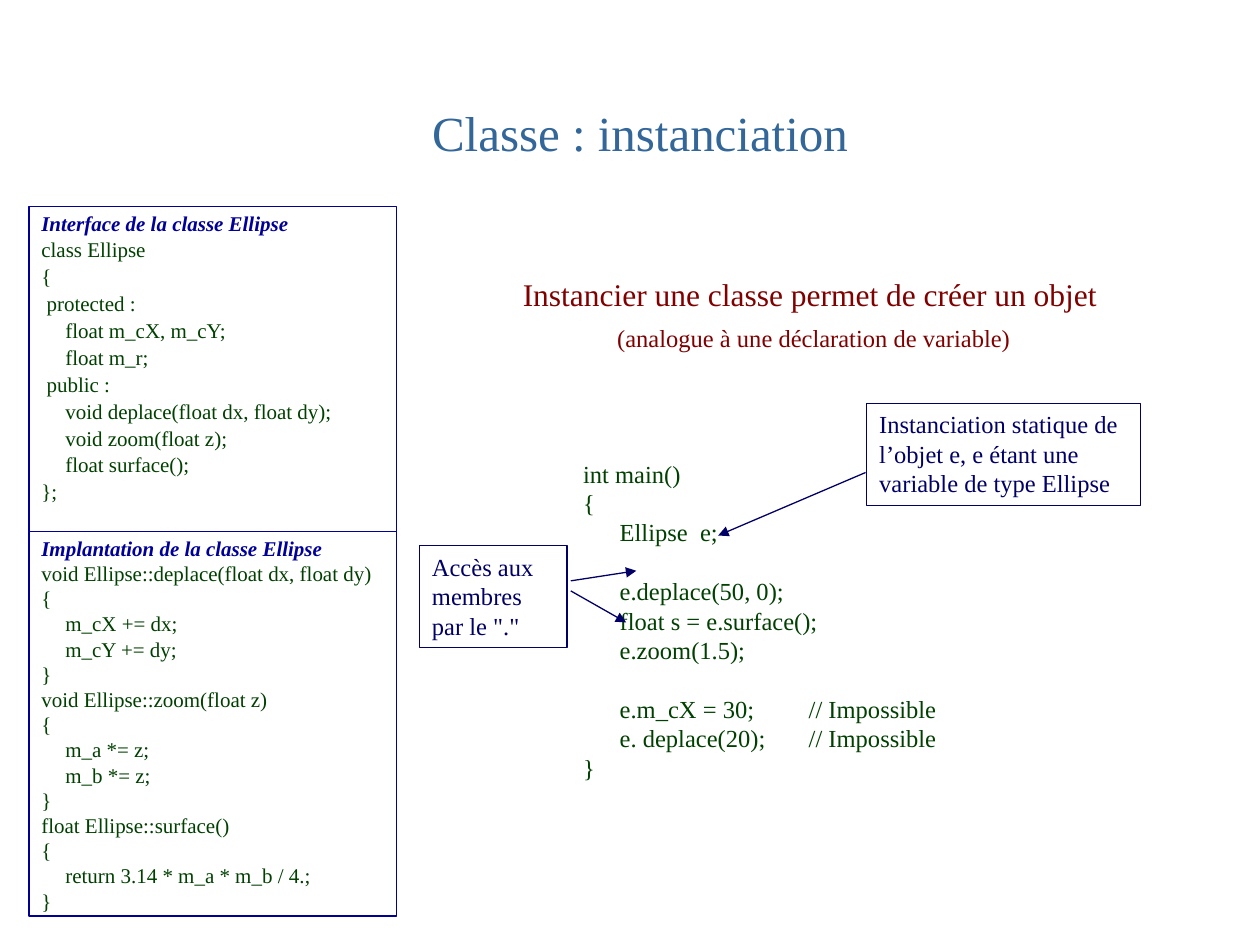
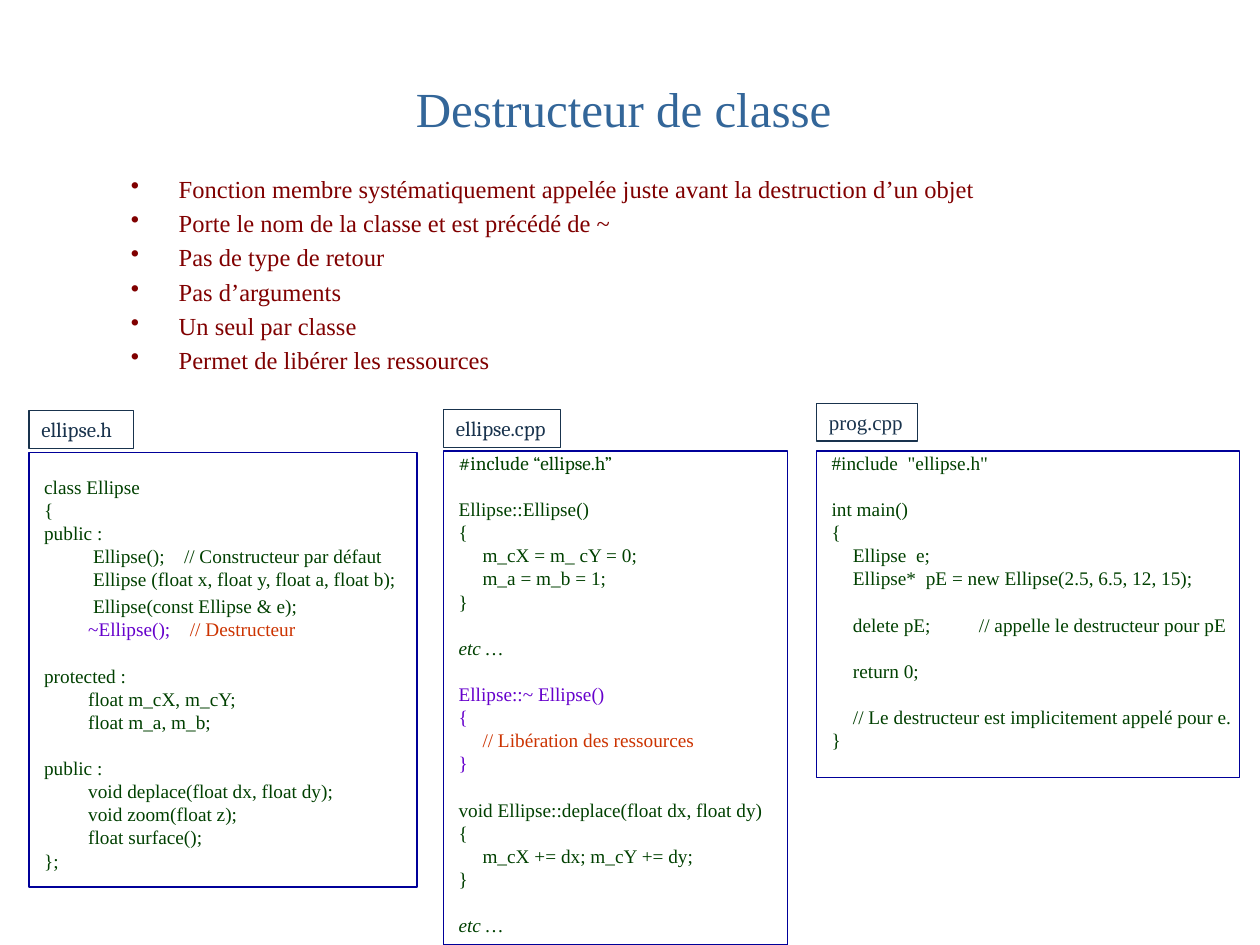
from dataclasses import dataclass
from typing import Optional, Union

from lxml.etree import SubElement
from pptx import Presentation
from pptx.dml.color import RGBColor as Rgb
from pptx.enum.shapes import MSO_CONNECTOR as Link, MSO_SHAPE as Form
from pptx.enum.text import MSO_ANCHOR as Anchor, PP_ALIGN as Align
from pptx.oxml.ns import qn
from pptx.slide import Slide
from pptx.util import Inches, Pt


@dataclass(frozen=True)
class Theme:
    title: str = "336699"
    code: str = "004000"
    frame: str = "000099"
    call: str = "000066"
    label: str = "19334D"
    point: str = "800000"
    kill: str = "6600CC"
    note: str = "CC3300"
    serif: str = "Times New Roman"
    alt: str = "Cambria"
    head_size: int = 28
    lead_size: int = 18
    text_size: int = 14
    code_size: int = 12
    file_size: int = 11
    edge: float = 0.75
    pitch: float = 1.2  # line height, in type sizes


@dataclass(frozen=True)
class Line:
    """One paragraph; fields left as None follow the text around it."""
    text: str
    color: Optional[str] = None
    face: Optional[str] = None
    size: Optional[int] = None
    bold: bool = False
    slant: bool = False
    lead: Optional[float] = None
    space: Optional[float] = None
    tail: Optional["Line"] = None


Lines = list[Union[str, Line]]
Quad = tuple[float, float, float, float]


@dataclass(frozen=True)
class Panel:
    at: Quad
    lines: Lines
    size: int
    hang: tuple[float, float]
    pad: Quad = (0, 0, 0, 0)
    lead: float = 0
    space: float = 1


@dataclass(frozen=True)
class Label:
    at: Quad
    text: str
    face: str


T = Theme()
PAD = (0.1, 0.05, 0.1, 0.05)
EM = chr(8195)


def put(slide: Slide, at: Quad, lines: Lines, *, size: int, color: str,
        face: str = T.serif, edge: Optional[str] = None, pad: Quad = PAD,
        hang: tuple[float, float] = (0, 0), lead: float = 0, space: float = 1,
        align: Align = Align.LEFT, anchor: Anchor = Anchor.TOP,
        dots: bool = False) -> None:
    """Draw text, framed if edge is set; an empty line opens a one-line gap."""
    spot = [Inches(n) for n in at]
    if edge:
        box = slide.shapes.add_shape(Form.RECTANGLE, *spot)
        box.shadow.inherit = False
        box.fill.background()
        box.line.color.rgb = Rgb.from_string(edge)
        box.line.width = Pt(T.edge)
    else:
        box = slide.shapes.add_textbox(*spot)
    frame = box.text_frame
    frame.word_wrap = True
    frame.vertical_anchor = anchor
    (frame.margin_left, frame.margin_top,
     frame.margin_right, frame.margin_bottom) = (Inches(n) for n in pad)

    gap, para = 0.0, None
    for item in lines:
        if item == "":
            gap += size * T.pitch
            continue
        line = Line(item) if isinstance(item, str) else item
        para = frame.add_paragraph() if para else frame.paragraphs[0]
        para.alignment = align
        para.line_spacing = line.space or space
        above = lead if line.lead is None else line.lead
        para.space_before = Pt(gap + above * (line.size or size))
        gap = 0.0
        props = para._p.get_or_add_pPr()
        props.set("marL", str(Inches(hang[0])))
        props.set("indent", str(Inches(hang[1])))
        if dots:
            SubElement(props, qn("a:buChar")).set("char", "•")
        part = line
        while part:
            run = para.add_run()
            run.text = part.text
            font = run.font
            font.name = part.face or face
            font.size = Pt(part.size or size)
            font.bold, font.italic = part.bold, part.slant
            font.color.rgb = Rgb.from_string(part.color or color)
            part = part.tail


def title(slide: Slide, left: float, top: float, text: str) -> None:
    put(slide, (left, top, 8.5, 1.25), [text], size=T.head_size,
        color=T.title, align=Align.CENTER, anchor=Anchor.MIDDLE)


def panel(slide: Slide, item: Panel) -> None:
    put(slide, item.at, item.lines, size=item.size, color=T.code,
        edge=T.frame, pad=item.pad, hang=item.hang, lead=item.lead,
        space=item.space)


def arrow(slide: Slide, x1: float, y1: float, x2: float, y2: float) -> None:
    wire = slide.shapes.add_connector(
        Link.STRAIGHT, *(Inches(n) for n in (x1, y1, x2, y2)))
    wire.line.color.rgb = Rgb.from_string(T.call)
    wire.line.width = Pt(T.edge)
    SubElement(wire.line._get_or_add_ln(), qn("a:tailEnd")).set("type", "triangle")
    SubElement(wire._element.spPr, qn("a:effectLst"))


def head(text: str) -> Line:
    return Line(text, T.frame, bold=True, slant=True, space=0.9)


ETC = Line("etc …", slant=True)

CLASS = [
    Panel((0.23, 1.64, 2.92, 2.58), [
        head("Interface de la classe Ellipse"),
        "class Ellipse",
        "{",
        " protected :",
        "\tfloat m_cX, m_cY;",
        "\tfloat m_r;",
        " public :",
        "\tvoid deplace(float dx, float dy);",
        "\tvoid zoom(float z);",
        "\tfloat surface();",
        "};",
    ], T.code_size, (0.19, -0.19), PAD, lead=0.2, space=0.9),
    Panel((0.23, 4.22, 2.92, 3.05), [
        head("Implantation de la classe Ellipse"),
        "void Ellipse::deplace(float dx, float dy)",
        "{",
        "\tm_cX += dx;",
        "\tm_cY += dy;",
        "}",
        "void Ellipse::zoom(float z)",
        "{",
        "\tm_a *= z;",
        "\tm_b *= z;",
        "}",
        "float Ellipse::surface()",
        "{",
        "\treturn 3.14 * m_a * m_b / 4.;",
        "}",
    ], T.code_size, (0.19, -0.19), PAD),
]

MAIN = [
    "int main()",
    "{",
    "\tEllipse  e;",
    "",
    "\te.deplace(50, 0);",
    "\tfloat s = e.surface();",
    "\te.zoom(1.5);",
    "",
    "\te.m_cX = 30; \t// Impossible",
    "\te. deplace(20); \t// Impossible",
    "}",
]

CALLS = [
    ((3.33, 4.33, 1.17, 0.81), 'Accès aux membres par le "."'),
    ((6.88, 3.2, 2.17, 0.81),
     "Instanciation statique de l’objet e, e étant une variable de type Ellipse"),
]

ARROWS = [
    (6.87, 3.75, 5.7, 4.25),
    (4.53, 4.61, 5.05, 4.53),
    (4.53, 4.69, 4.97, 4.94),
]

POINTS = [
    "Fonction membre systématiquement appelée juste avant la destruction d’un objet",
    "Porte le nom de la classe et est précédé de ~",
    "Pas de type de retour",
    "Pas d’arguments",
    "Un seul par classe",
    "Permet de libérer les ressources",
]

FILES = [
    Panel((3.52, 3.58, 2.73, 3.92), [
        Line("#include “ellipse.h”", face=T.alt),
        "",
        "Ellipse::Ellipse()",
        "{",
        "\tm_cX = m_ cY = 0;",
        "\tm_a = m_b = 1;",
        "}",
        "",
        ETC,
        "",
        Line("Ellipse::~ Ellipse()", T.kill),
        Line("{", T.kill),
        Line("\t// Libération des ressources", T.note),
        Line("}", T.kill),
        "",
        "void Ellipse::deplace(float dx, float dy)",
        "{",
        "\tm_cX += dx; m_cY += dy;",
        "}",
        "",
        ETC,
    ], T.file_size, (0.31, -0.19)),
    Panel((6.48, 3.58, 3.36, 2.59), [
        '#include  "ellipse.h"',
        "",
        "int main()",
        "{",
        "\tEllipse  e;",
        "\tEllipse*  pE = new Ellipse(2.5, 6.5, 12, 15);",
        "",
        "\tdelete pE;\t// appelle le destructeur pour pE",
        "",
        "\treturn 0;",
        "",
        "\t// Le destructeur est implicitement appelé pour e.",
        "}",
    ], T.file_size, (0.29, -0.17)),
    Panel((0.23, 3.59, 3.08, 3.45), [
        "class Ellipse",
        "{",
        "public :",
        f"\t Ellipse();{EM}// Constructeur par défaut",
        "\t Ellipse (float x, float y, float a, float b);",
        Line("\t Ellipse(const Ellipse & e);", lead=0.2),
        Line(f"\t~Ellipse();{EM}", T.kill, tail=Line("// Destructeur", T.note)),
        "",
        "protected :",
        "\tfloat m_cX, m_cY;",
        "\tfloat m_a, m_b;",
        "",
        "public :",
        "\tvoid deplace(float dx, float dy);",
        "\tvoid zoom(float z);",
        "\tfloat surface();",
        "};",
    ], T.file_size, (0.47, -0.35), (0, 0.18, 0, 0)),
]

LABELS = [
    Label((0.23, 3.26, 0.83, 0.3), "ellipse.h", T.alt),
    Label((3.52, 3.25, 0.93, 0.3), "ellipse.cpp", T.alt),
    Label((6.48, 3.2, 0.8, 0.3), "prog.cpp", T.serif),
]


def make(slide: Slide) -> None:
    """Slide on creating objects."""
    title(slide, 0.83, 0.42, "Classe : instanciation")
    for item in CLASS:
        panel(slide, item)
    put(slide, (4.53, 3.59, 4.11, 2.69), MAIN, size=T.text_size,
        color=T.code, hang=(0.29, -0.29))
    put(slide, (3.25, 2.17, 6.42, 0.7), [
        Line("Instancier une classe permet de créer un objet ", size=T.lead_size),
        "(analogue à une déclaration de variable)",
    ], size=T.text_size, color=T.point, lead=0.5, space=0.9, align=Align.CENTER)
    for at, text in CALLS:
        put(slide, at, [text], size=T.text_size, color=T.call, edge=T.call)
    for ends in ARROWS:
        arrow(slide, *ends)


def free(slide: Slide) -> None:
    """Slide on destructors."""
    title(slide, 0.7, 0.23, "Destructeur de classe")
    put(slide, (0.94, 1.33, 8.08, 1.83), POINTS, size=T.text_size,
        color=T.point, hang=(0.38, -0.38), lead=0.2, dots=True)
    for item in FILES:
        panel(slide, item)
    for tag in LABELS:
        put(slide, tag.at, [tag.text], size=T.code_size, color=T.label,
            face=tag.face, edge=T.label, pad=(0.1, 0.05, 0, 0.05))


def main() -> None:
    deck = Presentation()
    deck.slide_width, deck.slide_height = Inches(10), Inches(7.5)
    for draw in (make, free):
        draw(deck.slides.add_slide(deck.slide_layouts[6]))
    deck.save("out.pptx")


if __name__ == "__main__":
    main()
